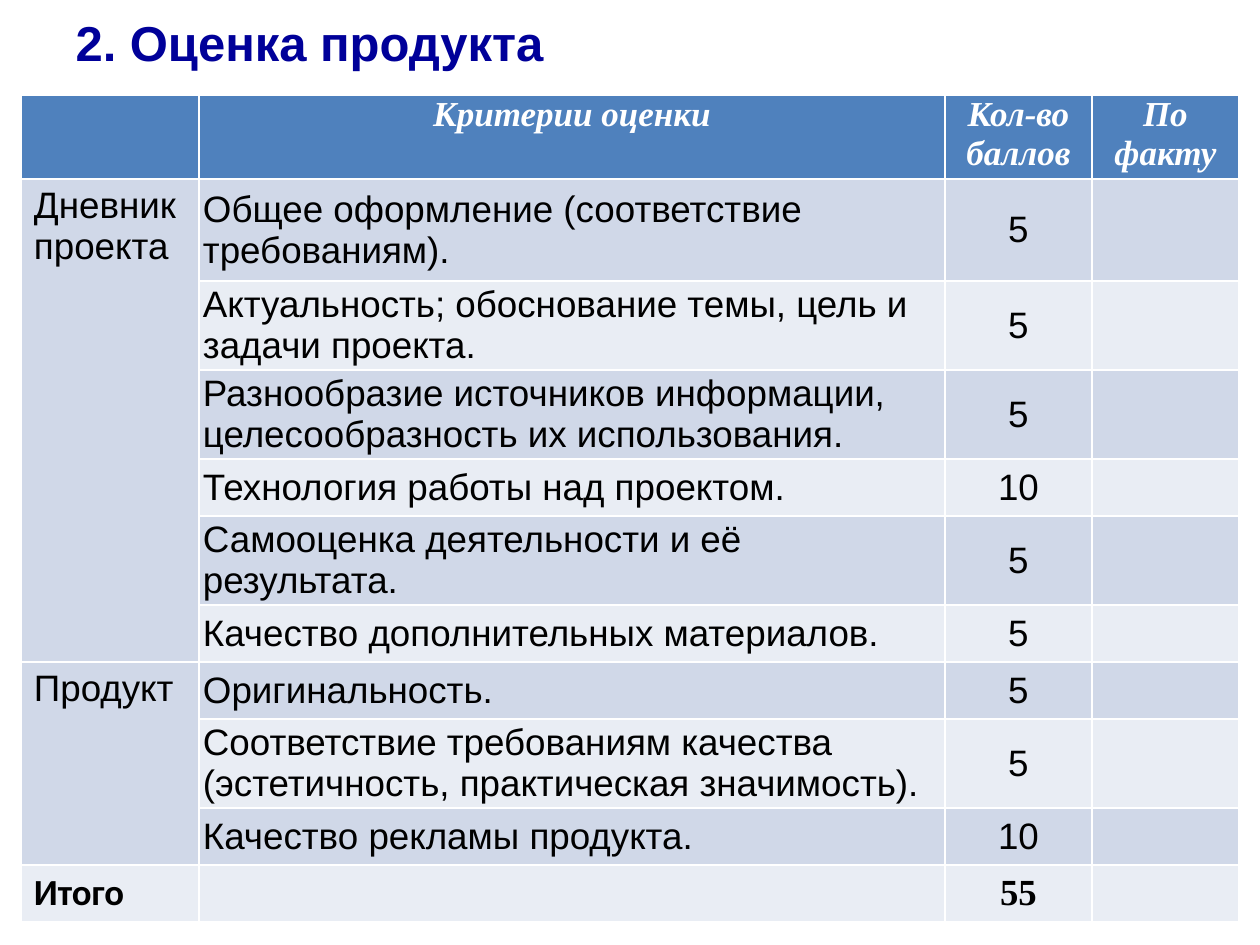
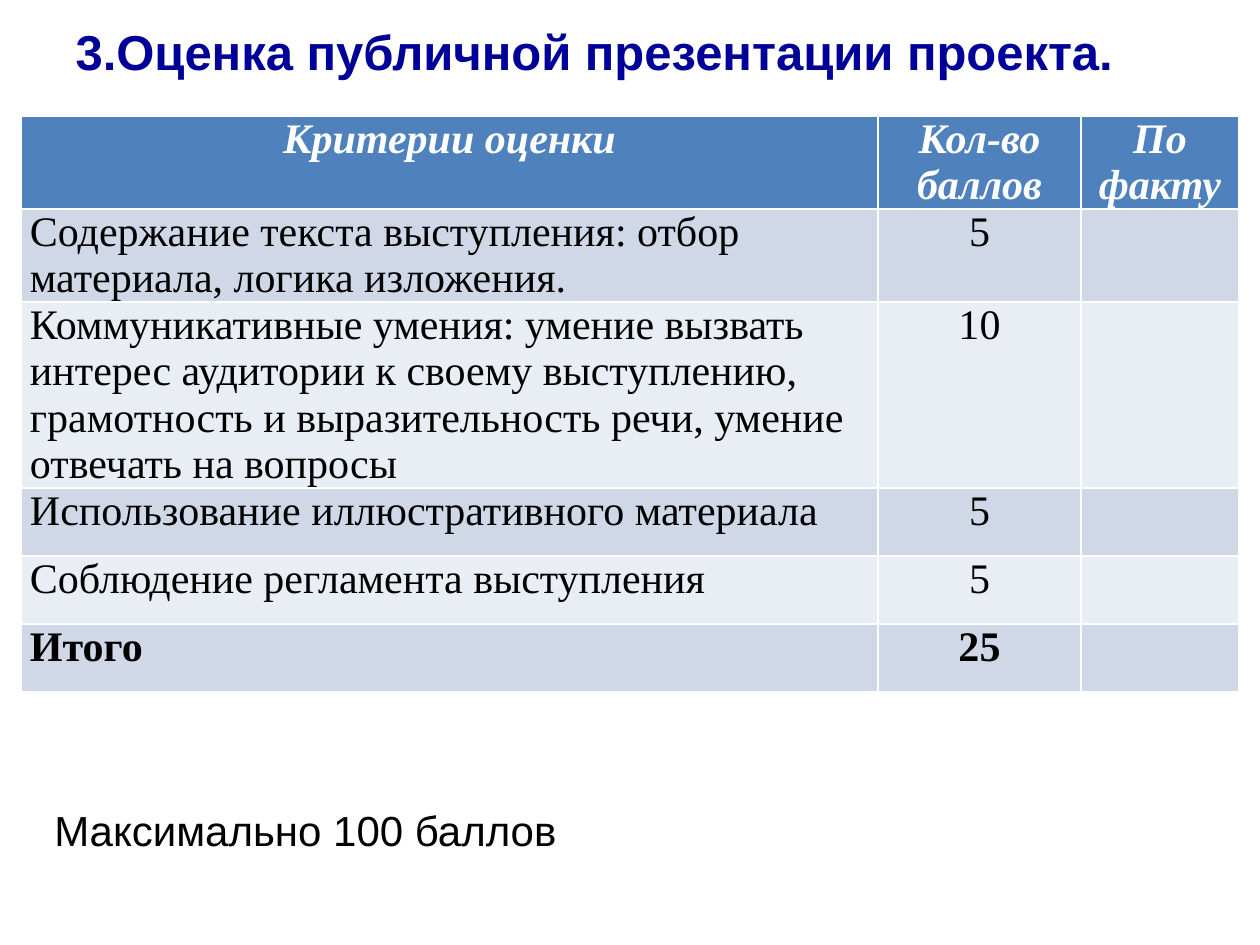
import dataclasses

import pptx
import pptx.dml.color
import pptx.enum.text
import pptx.presentation
import pptx.shapes.autoshape
import pptx.slide
import pptx.table
import pptx.text.text
import pptx.util

ALIGN = pptx.enum.text.PP_ALIGN
ANCHOR = pptx.enum.text.MSO_ANCHOR
TITLE_ONLY_LAYOUT = 5
PIXELS_PER_INCH = 126


@dataclasses.dataclass(frozen=True)
class Theme:
    title_color: str = "000099"
    header_fill: str = "4F81BD"
    header_color: str = "FFFFFF"
    band_fills: tuple[str, str] = ("E9EDF4", "D0D8E8")
    text_color: str = "000000"
    sans: str = "Arial"
    serif: str = "Times New Roman"
    label: str = "Calibri"
    title_size: int = 28
    caption_size: int = 24


@dataclasses.dataclass(frozen=True)
class Box:
    left: int
    top: int
    width: int
    height: int


@dataclasses.dataclass(frozen=True)
class TextStyle:
    font: str
    size: int
    color: str
    bold: bool = False
    italic: bool = False


@dataclasses.dataclass(frozen=True)
class Column:
    width: int
    align: ALIGN = ALIGN.LEFT
    anchor: ANCHOR = ANCHOR.TOP
    side_inset: int = 9
    edge_inset: int = 0


@dataclasses.dataclass(frozen=True)
class ScoreTable:
    top: int
    columns: list[Column]
    row_heights: list[int]
    rows: list[tuple[str, ...]]
    header: TextStyle
    body: TextStyle
    totals: list[TextStyle]
    merged_rows: list[tuple[int, int]] = dataclasses.field(default_factory=list)


THEME = Theme()
TABLE_LEFT = 21


def px(length: int) -> pptx.util.Emu:
    return pptx.util.Emu(round(length * 914400 / PIXELS_PER_INCH))


def rgb(color: str) -> pptx.dml.color.RGBColor:
    return pptx.dml.color.RGBColor.from_string(color)


def write_text(
    frame: pptx.text.text.TextFrame, text: str, style: TextStyle, align: ALIGN
) -> None:
    frame.word_wrap = True
    paragraph = frame.paragraphs[0]
    paragraph.text = text
    paragraph.alignment = align
    font = paragraph.font
    font.name = style.font
    font.size = pptx.util.Pt(style.size)
    font.bold = style.bold
    font.italic = style.italic
    font.color.rgb = rgb(style.color)


def add_titled_slide(
    presentation: pptx.presentation.Presentation, text: str, box: Box
) -> pptx.slide.Slide:
    slide = presentation.slides.add_slide(
        presentation.slide_layouts[TITLE_ONLY_LAYOUT]
    )
    title = slide.shapes.title
    title.left, title.top = px(box.left), px(box.top)
    title.width, title.height = px(box.width), px(box.height)
    style = TextStyle(THEME.sans, THEME.title_size, THEME.title_color, bold=True)
    write_text(title.text_frame, text, style, ALIGN.LEFT)
    title.text_frame.auto_size = pptx.enum.text.MSO_AUTO_SIZE.NONE
    title.text_frame.vertical_anchor = ANCHOR.MIDDLE
    return slide


def fill_cell(
    cell: pptx.table._Cell,
    text: str,
    style: TextStyle,
    column: Column,
    fill: str,
    is_header: bool,
) -> None:
    cell.fill.solid()
    cell.fill.fore_color.rgb = rgb(fill)
    if not text:
        return
    cell.margin_left = cell.margin_right = px(column.side_inset)
    cell.margin_top = cell.margin_bottom = px(column.edge_inset)
    cell.vertical_anchor = ANCHOR.TOP if is_header else column.anchor
    align = ALIGN.CENTER if is_header else column.align
    write_text(cell.text_frame, text, style, align)


def add_score_table(slide: pptx.slide.Slide, score: ScoreTable) -> None:
    frame = slide.shapes.add_table(
        len(score.rows),
        len(score.columns),
        px(TABLE_LEFT),
        px(score.top),
        px(sum(column.width for column in score.columns)),
        px(sum(score.row_heights)),
    )
    table = frame.table
    for index, column in enumerate(score.columns):
        table.columns[index].width = px(column.width)
    last = len(score.rows) - 1
    for row, texts in enumerate(score.rows):
        table.rows[row].height = px(score.row_heights[row])
        fill = THEME.band_fills[row % 2] if row else THEME.header_fill
        for index, (text, column) in enumerate(zip(texts, score.columns)):
            style = score.body if row else score.header
            if row == last:
                style = score.totals[index]
            fill_cell(table.cell(row, index), text, style, column, fill, row == 0)
    for first, final in score.merged_rows:
        table.cell(first, 0).merge(table.cell(final, 0))


def add_caption(slide: pptx.slide.Slide, text: str, box: Box) -> None:
    shape = slide.shapes.add_textbox(
        px(box.left), px(box.top), px(box.width), px(box.height)
    )
    style = TextStyle(THEME.sans, THEME.caption_size, THEME.text_color)
    write_text(shape.text_frame, text, style, ALIGN.LEFT)


def product_scores() -> ScoreTable:
    one_line, two_lines = 57, 89
    middle = {"anchor": ANCHOR.MIDDLE, "side_inset": 4}
    score_column = Column(147, ALIGN.CENTER, **middle)
    body = TextStyle(THEME.sans, 21, THEME.text_color)
    total_label = dataclasses.replace(body, font=THEME.label, bold=True)
    total_score = dataclasses.replace(body, font=THEME.serif, bold=True)
    return ScoreTable(
        top=95,
        columns=[
            Column(178, side_inset=13, edge_inset=6),
            Column(746, **middle),
            score_column,
            score_column,
        ],
        row_heights=[84, 102, two_lines, two_lines, one_line, two_lines]
        + [one_line, one_line, two_lines, one_line, one_line],
        rows=[
            ("", "Критерии оценки", "Кол-во баллов", "По факту"),
            ("Дневник проекта", "Общее оформление (соответствие требованиям).", "5", ""),
            ("", "Актуальность; обоснование темы, цель и задачи проекта.", "5", ""),
            (
                "",
                "Разнообразие источников информации, целесообразность их использования.",
                "5",
                "",
            ),
            ("", "Технология работы над проектом.", "10", ""),
            ("", "Самооценка деятельности и её результата.", "5", ""),
            ("", "Качество дополнительных материалов.", "5", ""),
            ("Продукт", "Оригинальность.", "5", ""),
            (
                "",
                "Соответствие требованиям качества "
                "(эстетичность, практическая значимость).",
                "5",
                "",
            ),
            ("", "Качество рекламы продукта.", "10", ""),
            ("Итого", "", "55", ""),
        ],
        header=TextStyle(THEME.serif, 20, THEME.header_color, bold=True, italic=True),
        body=body,
        totals=[total_label, body, total_score, body],
        merged_rows=[(1, 6), (7, 9)],
    )


def presentation_scores() -> ScoreTable:
    one_line, two_lines, four_lines = 68, 93, 186
    body = TextStyle(THEME.serif, 24, THEME.text_color)
    total = dataclasses.replace(body, bold=True)
    return ScoreTable(
        top=116,
        columns=[Column(857), Column(203, ALIGN.CENTER), Column(158, ALIGN.CENTER)],
        row_heights=[two_lines, two_lines, four_lines] + [one_line] * 3,
        rows=[
            ("Критерии оценки", "Кол-во баллов", "По факту"),
            (
                "Содержание текста выступления: отбор материала, логика изложения.",
                "5",
                "",
            ),
            (
                "Коммуникативные умения: умение вызвать интерес аудитории к своему "
                "выступлению, грамотность и выразительность речи, "
                "умение отвечать на вопросы",
                "10",
                "",
            ),
            ("Использование иллюстративного материала", "5", ""),
            ("Соблюдение регламента выступления", "5", ""),
            ("Итого", "25", ""),
        ],
        header=TextStyle(THEME.serif, 24, THEME.header_color, bold=True, italic=True),
        body=body,
        totals=[total] * 3,
    )


def main() -> None:
    presentation = pptx.Presentation()
    presentation.slide_width, presentation.slide_height = px(1260), px(945)

    product_slide = add_titled_slide(
        presentation, "2. Оценка продукта", Box(63, 0, 1134, 84)
    )
    add_score_table(product_slide, product_scores())

    speech_slide = add_titled_slide(
        presentation, "3.Оценка публичной презентации проекта.", Box(63, 24, 1134, 53)
    )
    add_score_table(speech_slide, presentation_scores())
    add_caption(speech_slide, "Максимально 100 баллов", Box(42, 798, 766, 63))

    presentation.save("out.pptx")


if __name__ == "__main__":
    main()
